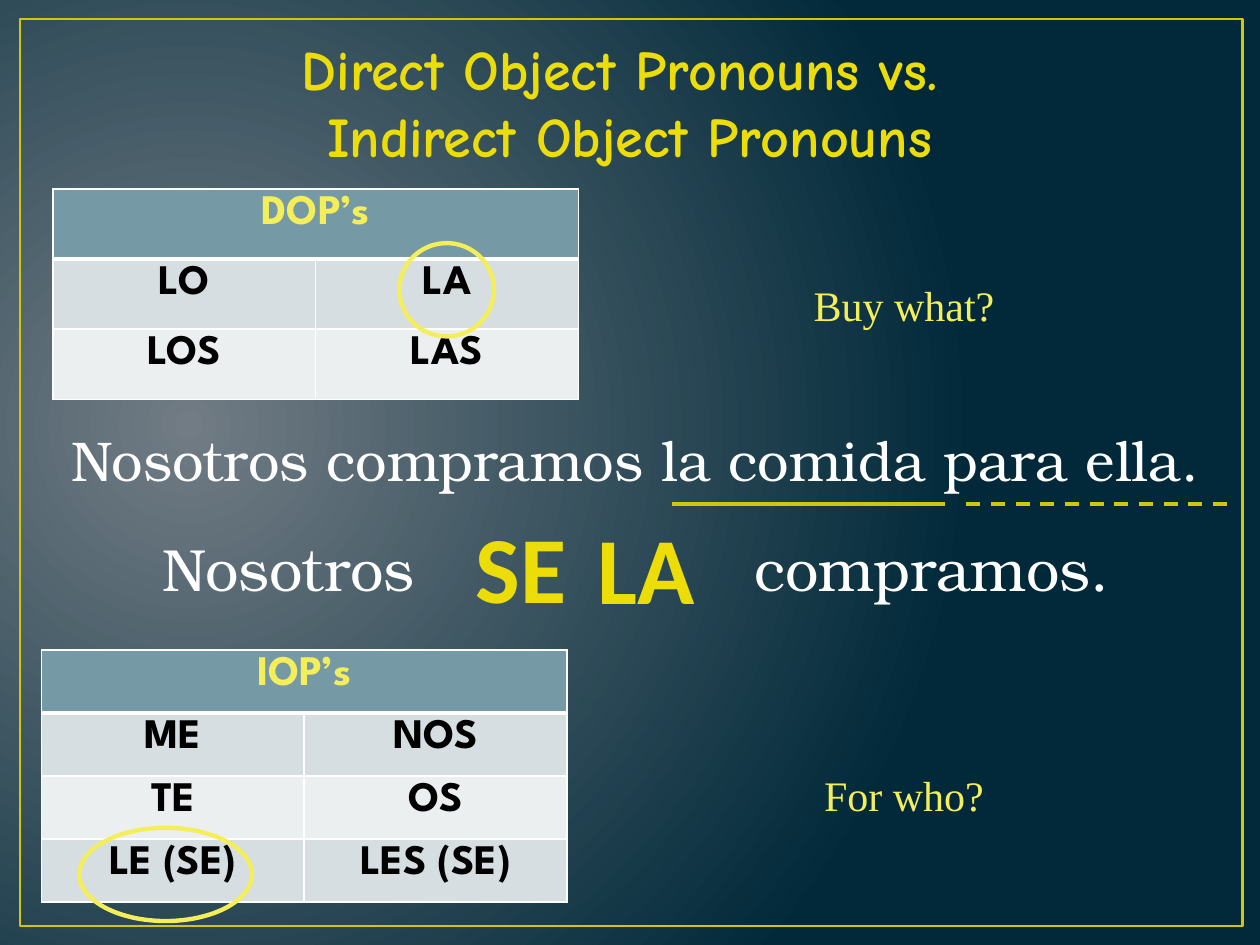
from pptx import Presentation, oxml
from pptx import util as u
from pptx.dml.color import RGBColor
from pptx.enum import dml, shapes, text
from pptx.oxml import ns

WHITE = RGBColor(0xFF, 0xFF, 0xFF)
BLACK = RGBColor(0, 0, 0)
LEMON = RGBColor(0xF5, 0xEE, 0x5B)
GOLD = RGBColor(0xCF, 0xC6, 0x0D)
TEAL = RGBColor(0x75, 0x9A, 0xA5)
BANDS = RGBColor(0xD6, 0xDE, 0xE1), RGBColor(0xEC, 0xEF, 0xF0)
SHINE = [(0, "FFF477"), (75, "ECDD09"), (100, "A39B00")]
NIGHT = [(0, "717C84"), (100, "01293A")]
LINEAR = '<a:lin ang="5400000" scaled="0"/>'
RADIAL = ('<a:path path="circle"><a:fillToRect l="15000" t="50000" '
          'r="85000" b="60000"/></a:path>')

TITLE = ["Direct Object Pronouns vs. ", "Indirect Object Pronouns"]
TABLES = [
    ((0.42, 1.5, 4.17, 1.67), "DOP’s", [("LO", "LA"), ("LOS", "LAS")]),
    ((0.33, 5.16, 4.17, 2), "IOP’s",
     [("ME", "NOS"), ("TE", "OS"), ("LE (SE)", "LES (SE)")]),
]
SERIF, ROMAN = "TeX Gyre Bonum", "Times New Roman"
LABELS = [
    ((0.17, 3.33, 9.75, 0.64), "Nosotros compramos la comida para ella.",
     SERIF, 32, WHITE),
    ((4.76, 2.17, 4.83, 0.5), "Buy what?", ROMAN, 24, LEMON),
    ((4.76, 6.06, 4.83, 0.5), "For who?", ROMAN, 24, LEMON),
    ((1.09, 4.17, 2.4, 0.67), "Nosotros", SERIF, 34, WHITE),
    ((5.8, 4.17, 3.2, 0.67), "compramos.", SERIF, 34, WHITE),
]
WORDS = [((3.67, 3.99, 0.93, 1.01), "SE"), ((4.59, 4, 1.08, 1.01), "LA")]
RULES = [(5.33, 7.5, None), (7.67, 9.75, dml.MSO_LINE.DASH)]
RULE_Y = 4
RINGS = [(3.17, 1.93, 0.75, 0.74), (0.63, 6.57, 1.37, 0.74)]
FRAME = 0.16, 0.15, 9.7, 7.2


def place(box):
    return [u.Inches(n) for n in box]


def node(tag, attrs="", body=""):
    return oxml.parse_xml(f'<a:{tag} {ns.nsdecls("a")} {attrs}>{body}</a:{tag}>')


def blend(stops, path):
    marks = "".join(f'<a:gs pos="{pos * 1000}"><a:srgbClr val="{hue}"/></a:gs>'
                    for pos, hue in stops)
    return node("gradFill", 'rotWithShape="1"', f"<a:gsLst>{marks}</a:gsLst>{path}")


def style(para, name, size, hue=None, bold=False):
    para.alignment = text.PP_ALIGN.CENTER
    font = para.font
    font.name, font.size, font.bold = name, u.Pt(size), bold
    if hue is not None:
        font.color.rgb = hue


def shine(para):
    for run in para.runs:
        run._r.get_or_add_rPr().insert(0, blend(SHINE, LINEAR))


def label(slide, box, words, wrap=True):
    frame = slide.shapes.add_textbox(*place(box)).text_frame
    frame.word_wrap = wrap
    frame.text = words
    return frame.paragraphs[0]


def outline(slide, kind, box, hue, width):
    shape = slide.shapes.add_shape(kind, *place(box))
    shape.shadow.inherit = False
    shape.fill.background()
    shape.line.color.rgb = hue
    shape.line.width = u.Pt(width)


def edge(cell, row):
    widths = {"lnL": 1, "lnR": 1, "lnT": 3 if row == 1 else 1,
              "lnB": 3 if row == 0 else 1}
    props = cell._tc.get_or_add_tcPr()
    for i, (tag, width) in enumerate(widths.items()):
        props.insert(i, node(tag, f'w="{u.Pt(width)}"',
                             f'<a:solidFill><a:srgbClr val="{WHITE}"/></a:solidFill>'))


def grid(slide, box, head, body):
    rows = [(head, "")] + body
    table = slide.shapes.add_table(len(rows), 2, *place(box)).table
    for r, row in enumerate(rows):
        table.rows[r].height = u.Inches(box[3] / len(rows))
        for c, word in enumerate(row):
            cell = table.cell(r, c)
            cell.text = word
            cell.fill.solid()
            cell.fill.fore_color.rgb = BANDS[(r - 1) % 2] if r else TEAL
            style(cell.text_frame.paragraphs[0], "League Spartan", 24,
                  BLACK if r else LEMON, True)
            edge(cell, r)
    table.cell(0, 0).merge(table.cell(0, 1))


def main():
    deck = Presentation()
    deck.slide_width, deck.slide_height = place((10, 7.5))
    slide = deck.slides.add_slide(deck.slide_layouts[5])
    slide.background.fill.solid()
    back = slide.element.find(".//" + ns.qn("p:bgPr"))
    back.replace(back[0], blend(NIGHT, RADIAL))

    outline(slide, shapes.MSO_SHAPE.RECTANGLE, FRAME, GOLD, 1.5)
    title = slide.shapes.title
    title.left, title.top, title.width, title.height = place((1.65, 0.22, 6.7, 1.18))
    frame = title.text_frame
    frame.text = "\n".join(TITLE)
    frame.word_wrap = False
    frame.auto_size = text.MSO_AUTO_SIZE.NONE
    frame.vertical_anchor = text.MSO_ANCHOR.TOP
    for para in frame.paragraphs:
        style(para, "Comic Neue", 32, bold=True)
        shine(para)

    for spec in TABLES:
        grid(slide, *spec)
    for box, words, name, size, hue in LABELS:
        style(label(slide, box, words), name, size, hue)

    for start, end, dash in RULES:
        line = slide.shapes.add_connector(
            shapes.MSO_CONNECTOR.STRAIGHT, *place((start, RULE_Y, end, RULE_Y)))
        line.line.color.rgb = GOLD
        line.line.width = u.Pt(2)
        if dash:
            line.line.dash_style = dash
        line._element.spPr.append(node("effectLst"))
    for box in RINGS:
        outline(slide, shapes.MSO_SHAPE.OVAL, box, LEMON, 2.5)

    for box, word in WORDS:
        para = label(slide, box, word, False)
        style(para, "Calibri", 54, bold=True)
        shine(para)
    deck.save("out.pptx")


if __name__ == "__main__":
    main()
